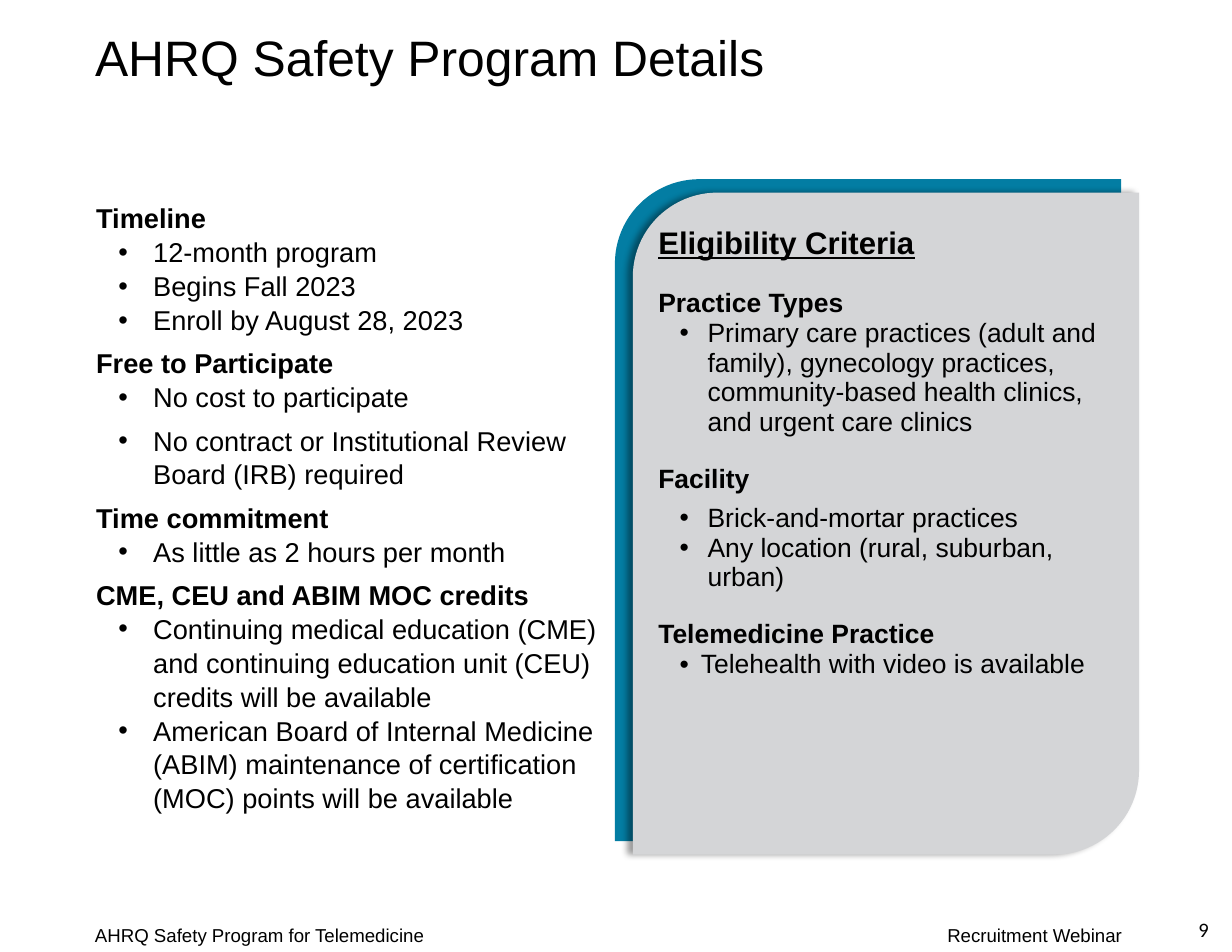
from lxml.etree import SubElement
from pptx import Presentation
from pptx.dml.color import RGBColor
from pptx.enum.shapes import MSO_SHAPE
from pptx.enum.text import MSO_ANCHOR, PP_ALIGN
from pptx.oxml.ns import qn
from pptx.util import Inches, Pt

COLORS = {"ink": "000000", "teal": "037DA3", "gray": "D4D5D7"}

deck = Presentation()
deck.slide_width, deck.slide_height = Inches(11), Inches(8.5)
page = deck.slides.add_slide(deck.slide_layouts[6])
COLUMN = deck.slide_width / 44
ROW = deck.slide_height / 34


def place(column, row, columns, rows):
    return [int(column * COLUMN), int(row * ROW), int(columns * COLUMN), int(rows * ROW)]


def write(area, lines, anchor=MSO_ANCHOR.TOP, align=PP_ALIGN.LEFT, font="Arial", spacing=1.0):
    box = page.shapes.add_textbox(*place(*area))
    frame = box.text_frame
    frame.word_wrap = True
    frame.vertical_anchor = anchor
    for index, (text, size, bold, indent, before, after) in enumerate(lines):
        paragraph = frame.paragraphs[0] if index == 0 else frame.add_paragraph()
        paragraph.text = text
        paragraph.alignment = align
        paragraph.line_spacing = spacing
        paragraph.space_before, paragraph.space_after = Pt(before), Pt(after)
        if indent:
            margin, hanging = indent
            properties = paragraph._p.get_or_add_pPr()
            properties.set("marL", str(Inches(margin)))
            properties.set("indent", str(-Inches(hanging)))
            SubElement(properties, qn("a:buFont"), typeface="Arial")
            SubElement(properties, qn("a:buChar"), char="•")
        paragraph.font.name = font
        paragraph.font.size = Pt(size)
        paragraph.font.bold = bold
        paragraph.font.color.rgb = RGBColor.from_string(COLORS["ink"])
    return frame


for column, row, color in [(21.96, 6.4, "teal"), (22.6, 6.88, "gray")]:
    panel = page.shapes.add_shape(MSO_SHAPE.ROUND_2_DIAG_RECTANGLE, *place(column, row, 18.08, 23.64))
    panel.shadow.inherit = False
    panel.fill.solid()
    panel.fill.fore_color.rgb = RGBColor.from_string(COLORS[color])
    panel.line.fill.background()

effects = panel._element.spPr.find(qn("a:effectLst"))
shadow = SubElement(effects, qn("a:outerShdw"), blurRad=str(Pt(4)), dist=str(Pt(3)),
                    dir="10800000", rotWithShape="0")
shade = SubElement(shadow, qn("a:srgbClr"), val=COLORS["ink"])
SubElement(shade, qn("a:alpha"), val="40000")

write((3, 0, 37.96, 4.32), [("AHRQ Safety Program Details", 32, False, None, 0, 0)],
      anchor=MSO_ANCHOR.MIDDLE, spacing=0.9)

program = [
    ("Timeline", [("12-month program", 0), ("Begins Fall 2023", 0),
                  ("Enroll by August 28, 2023", 6)]),
    ("Free to Participate", [("No cost to participate", 6),
                             ("No contract or Institutional Review Board (IRB) required", 6)]),
    ("Time commitment", [("As little as 2 hours per month", 6)]),
    ("CME, CEU and ABIM MOC credits", [
        ("Continuing medical education (CME) and continuing education unit (CEU) "
         "credits will be available", 0),
        ("American Board of Internal Medicine (ABIM) maintenance of certification (MOC) "
         "points will be available", 0)]),
]
details = []
for heading, bullets in program:
    details.append((heading, 17.5, True, None, 0, 0))
    for text, after in bullets:
        details.append((text, 17.5, False, (0.51, 0.31), 0, after))
write((3.04, 6.96, 18.68, 23.64), details, spacing=1.04)

eligibility = [
    ("Practice Types", (0.44, 0.25), [
        ("Primary care practices (adult and family), gynecology practices, "
         "community-based health clinics, and urgent care clinics", 0, 12)]),
    ("Facility", (0.44, 0.25), [("Brick-and-mortar practices", 5.5, 0),
                                ("Any location (rural, suburban, urban)", 0, 12)]),
    ("Telemedicine Practice", (0.38, 0.19), [("Telehealth with video is available", 0, 12)]),
]
criteria = [("Eligibility Criteria", 20, True, None, 0, 12)]
for heading, indent, bullets in eligibility:
    criteria.append((heading, 17, True, None, 5.5, 0))
    for text, before, after in bullets:
        criteria.append((text, 17, False, indent, before, after))
frame = write((23.12, 7.88, 17.72, 22.72), criteria, spacing=0.94)
frame.paragraphs[0].font.underline = True

write((3, 32.8, 16.64, 1.2), [("AHRQ Safety Program for Telemedicine", 12, False, None, 0, 0)])
write((33.44, 32.8, 7.6, 1.2), [("Recruitment Webinar", 12, False, None, 0, 0)])
write((41, 32.48, 2.56, 1.44), [("9", 13.2, False, None, 0, 0)],
      anchor=MSO_ANCHOR.MIDDLE, align=PP_ALIGN.RIGHT, font="Calibri")

deck.save("out.pptx")
